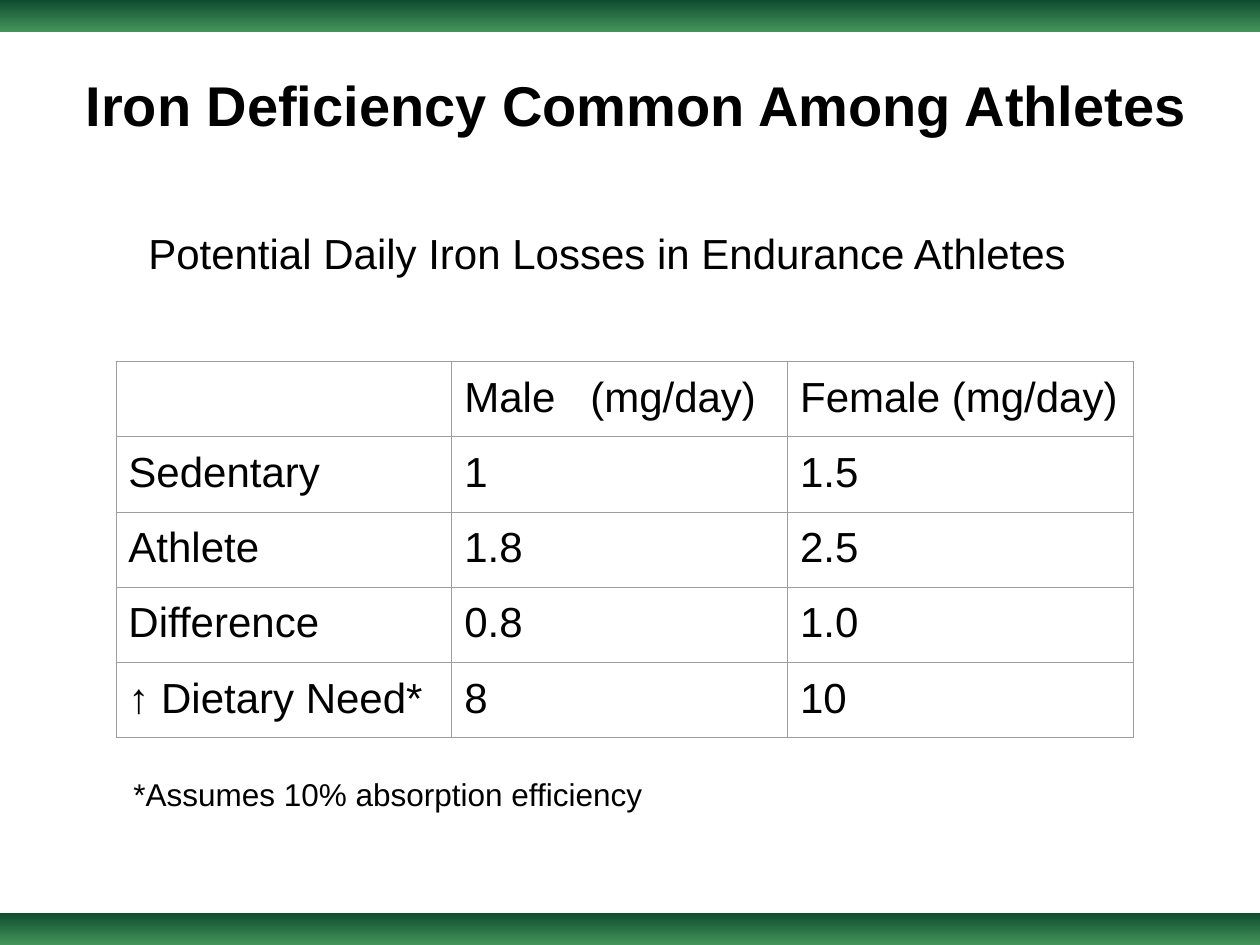
from dataclasses import dataclass

import pptx
import pptx.dml.color
import pptx.enum.text
import pptx.enum.shapes
import pptx.oxml
import pptx.oxml.ns
import pptx.util
from pptx.util import Cm


@dataclass(frozen=True)
class Theme:
    font: str = "Arial"
    text: str = "000000"
    bar_dark: str = "0F4D2F"
    bar_light: str = "44945B"
    border: str = "9E9E9E"
    border_width: float = 0.75
    title_size: int = 32
    body_size: int = 24
    note_size: int = 18


THEME = Theme()
SLIDE_WIDTH, SLIDE_HEIGHT = Cm(25.4), Cm(19.05)
BAR_HEIGHT = Cm(0.64)
COLUMN_WIDTHS = (Cm(6.77), Cm(6.77), Cm(6.97))
ROW_HEIGHT = Cm(1.45)
ROWS = [
    ("", "Male\t(mg/day)", "Female (mg/day)"),
    ("Sedentary", "1", "1.5"),
    ("Athlete", "1.8", "2.5"),
    ("Difference", "0.8", "1.0"),
    ("↑ Dietary Need*", "8", "10"),
]


def rgb(value):
    return pptx.dml.color.RGBColor.from_string(value)


def write_text(text_frame, text, size=THEME.body_size, bold=False):
    paragraph = text_frame.paragraphs[0]
    paragraph.text = text
    paragraph.alignment = pptx.enum.text.PP_ALIGN.LEFT
    for font in [paragraph.font] + [run.font for run in paragraph.runs]:
        font.name = THEME.font
        font.size = pptx.util.Pt(size)
        font.bold = bold
        font.color.rgb = rgb(THEME.text)


def add_bar(slide, top):
    bar = slide.shapes.add_shape(
        pptx.enum.shapes.MSO_SHAPE.RECTANGLE, 0, top, SLIDE_WIDTH, BAR_HEIGHT)
    bar.shadow.inherit = False
    bar.line.fill.background()
    bar.fill.gradient()
    bar.fill.gradient_angle = 270
    for stop, color in zip(bar.fill.gradient_stops, (THEME.bar_dark, THEME.bar_light)):
        stop.color.rgb = rgb(color)


def set_title(slide, text):
    title = slide.shapes.title
    title.left, title.top, title.width, title.height = Cm(1.47), Cm(1.3), Cm(22.78), Cm(1.6)
    title.text_frame.auto_size = pptx.enum.text.MSO_AUTO_SIZE.NONE
    title.text_frame.vertical_anchor = pptx.enum.text.MSO_ANCHOR.MIDDLE
    write_text(title.text_frame, text, size=THEME.title_size, bold=True)


def add_text(slide, text, left, top, width, height, vertical_inset, **text_format):
    text_frame = slide.shapes.add_textbox(left, top, width, height).text_frame
    text_frame.word_wrap = True
    text_frame.margin_top = text_frame.margin_bottom = vertical_inset
    write_text(text_frame, text, **text_format)


def set_borders(cell):
    properties = cell._tc.get_or_add_tcPr()
    width = pptx.util.Pt(THEME.border_width)
    for side in ("lnL", "lnR", "lnT", "lnB"):
        properties.append(pptx.oxml.parse_xml(
            f'<a:{side} {pptx.oxml.ns.nsdecls("a")} w="{width}"><a:solidFill>'
            f'<a:srgbClr val="{THEME.border}"/></a:solidFill></a:{side}>'))


def add_loss_table(slide):
    table = slide.shapes.add_table(
        len(ROWS), len(COLUMN_WIDTHS), Cm(2.34), Cm(7.29),
        sum(COLUMN_WIDTHS), ROW_HEIGHT * len(ROWS)).table
    table.first_row = table.horz_banding = False
    for column, width in zip(table.columns, COLUMN_WIDTHS):
        column.width = width
    for row, texts in zip(table.rows, ROWS):
        row.height = ROW_HEIGHT
        for cell, text in zip(row.cells, texts):
            cell.margin_left = cell.margin_right = Cm(0.25)
            cell.margin_top = cell.margin_bottom = Cm(0.25)
            set_borders(cell)
            cell.fill.background()
            write_text(cell.text_frame, text)


def main():
    presentation = pptx.Presentation()
    presentation.slide_width, presentation.slide_height = SLIDE_WIDTH, SLIDE_HEIGHT
    slide = presentation.slides.add_slide(presentation.slide_layouts[5])
    for top in (0, SLIDE_HEIGHT - BAR_HEIGHT):
        add_bar(slide, top)
    set_title(slide, "Iron Deficiency Common Among Athletes")
    add_text(slide, "Potential Daily Iron Losses in Endurance Athletes",
             Cm(2.74), Cm(4.45), Cm(19.02), Cm(2.84), vertical_inset=Cm(0.13))
    add_loss_table(slide)
    add_text(slide, "*Assumes 10% absorption efficiency",
             Cm(2.44), Cm(15.37), Cm(16.46), Cm(1.09), vertical_inset=Cm(0.25),
             size=THEME.note_size)
    presentation.save("out.pptx")


if __name__ == "__main__":
    main()
